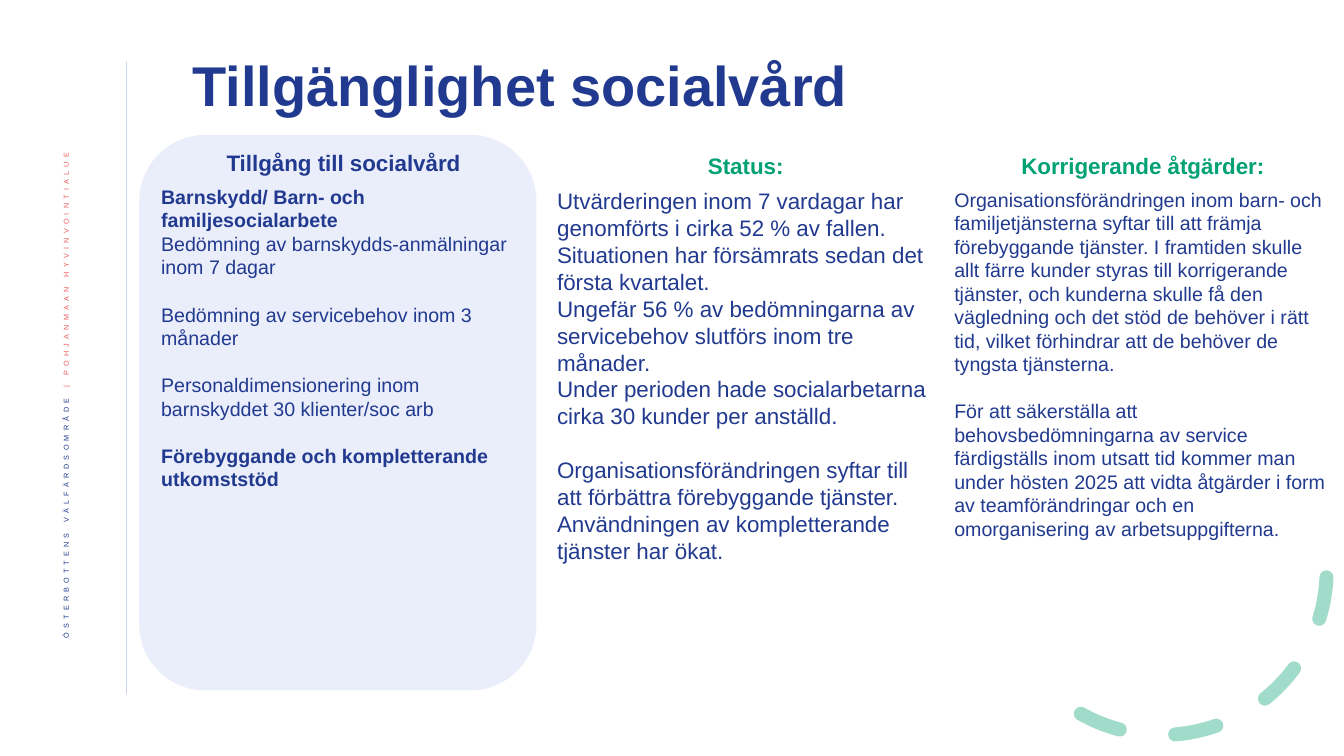
from dataclasses import dataclass, field
from typing import Optional

from lxml import etree
from pptx import Presentation
from pptx import util as u
from pptx.dml.color import RGBColor
from pptx.enum import dml, shapes, text
from pptx.oxml.ns import qn

NAVY = RGBColor(0x21, 0x3A, 0x8F)
GREEN = RGBColor(0x00, 0xA1, 0x74)
CORAL = RGBColor(0xEB, 0x5C, 0x5F)
LAVENDER = RGBColor(0xC9, 0xD2, 0xF2)
FONT = "Arial"
LINE_HEIGHT = 1.2
COLUMN_TOP = 3.71


@dataclass
class Run:
    words: str
    size: float
    color: RGBColor = NAVY
    bold: bool = False
    attributes: dict[str, str] = field(default_factory=dict)


@dataclass
class Block:
    """A paragraph; gap adds one line of space above it."""
    runs: list[Run]
    gap: bool = False
    format: dict = field(default_factory=dict)


@dataclass
class Column:
    left: float
    width: float
    height: float
    heading: str
    heading_color: RGBColor
    size: float
    body: list[tuple[str, bool, bool]]  # words, bold, gap
    heading_spacing: Optional[float] = None


COLUMNS = [
    Column(3.81, 9.7, 9.47, "Tillgång till socialvård", NAVY, 14, [
        ("Barnskydd/ Barn- och familjesocialarbete", True, False),
        ("Bedömning av barnskydds-anmälningar inom 7 dagar", False, False),
        ("Bedömning av servicebehov inom 3 månader", False, True),
        ("Personaldimensionering inom barnskyddet 30 klienter/soc arb", False, True),
        ("Förebyggande och kompletterande utkomststöd", True, True),
    ], heading_spacing=0.9),
    Column(13.79, 10.01, 10.72, "Status:", GREEN, 16, [
        ("Utvärderingen inom 7 vardagar har genomförts i cirka 52 % av fallen. "
         "Situationen har försämrats sedan det första kvartalet.", False, False),
        ("Ungefär 56 % av bedömningarna av servicebehov slutförs inom tre månader.",
         False, False),
        ("Under perioden hade socialarbetarna cirka 30 kunder per anställd.",
         False, False),
        ("Organisationsförändringen syftar till att förbättra förebyggande tjänster. "
         "Användningen av kompletterande tjänster har ökat.", False, True),
    ]),
    Column(23.8, 10.01, 10.13, "Korrigerande åtgärder:", GREEN, 14, [
        ("Organisationsförändringen inom barn- och familjetjänsterna syftar till att "
         "främja förebyggande tjänster. I framtiden skulle allt färre kunder styras "
         "till korrigerande tjänster, och kunderna skulle få den vägledning och det "
         "stöd de behöver i rätt tid, vilket förhindrar att de behöver de tyngsta "
         "tjänsterna.", False, False),
        ("För att säkerställa att behovsbedömningarna av service färdigställs inom "
         "utsatt tid kommer man under hösten 2025 att vidta åtgärder i form av "
         "teamförändringar och en omorganisering av arbetsuppgifterna.", False, True),
    ]),
]


def apply(target, values: dict) -> None:
    for name, value in values.items():
        setattr(target, name, value)


def set_alpha(element, percent: int) -> None:
    color = next(element.iter(qn("a:srgbClr")))
    etree.SubElement(color, qn("a:alpha")).set("val", str(percent * 1000))


def add_text(slide, box: tuple, blocks: list[Block], **frame_format):
    shape = slide.shapes.add_textbox(*map(u.Cm, box))
    frame = shape.text_frame
    apply(frame, {"word_wrap": True, **frame_format})
    for index, block in enumerate(blocks):
        paragraph = frame.add_paragraph() if index else frame.paragraphs[0]
        apply(paragraph, block.format)
        if block.gap:
            paragraph.space_before = u.Pt(block.runs[0].size * LINE_HEIGHT)
        for part in block.runs:
            run = paragraph.add_run()
            run.text = part.words
            apply(run.font, {"name": FONT, "size": u.Pt(part.size), "bold": part.bold})
            run.font.color.rgb = part.color
            for name, value in part.attributes.items():
                run.font._element.set(name, value)
    return shape


def add_column(slide, column: Column) -> None:
    heading_format = {"alignment": text.PP_ALIGN.CENTER, "space_after": u.Pt(6)}
    if column.heading_spacing:
        heading_format["line_spacing"] = column.heading_spacing
    heading = Block([Run(column.heading, 16, column.heading_color, True)],
                    format=heading_format)
    body = [Block([Run(words, column.size, bold=bold)], gap)
            for words, bold, gap in column.body]
    add_text(slide, (column.left, COLUMN_TOP, column.width, column.height),
             [heading, *body], auto_size=text.MSO_AUTO_SIZE.SHAPE_TO_FIT_TEXT)


def add_side_strip(slide) -> None:
    rule = slide.shapes.add_connector(shapes.MSO_CONNECTOR.STRAIGHT, u.Cm(3.18),
                                      u.Cm(1.55), u.Cm(3.18), u.Cm(17.48))
    rule.line.color.rgb = LAVENDER
    rule.line.width = u.Pt(0.5)
    etree.SubElement(rule._element.spPr, qn("a:effectLst"))

    raised = {"baseline": "30000", "spc": "300"}
    names = Block([Run("ÖSTERBOTTENS VÄLFÄRDSOMRÅDE ", 9, attributes=raised),
                   Run("| POHJANMAAN HYVINVOINTIALUE", 9, CORAL, attributes=raised)],
                  format={"alignment": text.PP_ALIGN.RIGHT, "line_spacing": 0.9})
    strip = add_text(slide, (1.07, 3.61, 1.32, 14.55), [names],
                     vertical_anchor=text.MSO_ANCHOR.MIDDLE)
    strip.text_frame._txBody.bodyPr.set("vert", "vert270")


def add_dashed_arc(slide) -> None:
    arc = slide.shapes.add_shape(shapes.MSO_SHAPE.ARC, u.Cm(25.12), u.Cm(10.21),
                                 u.Cm(8.31), u.Cm(8.31))
    arc.shadow.inherit = False
    arc.rotation = 98.9
    for index, adjustment in enumerate((158.17, 17.81)):
        arc.adjustments[index] = adjustment
    arc.fill.background()
    arc.line.color.rgb = GREEN
    apply(arc.line, {"width": u.Pt(10), "dash_style": dml.MSO_LINE.DASH})
    outline = arc._element.spPr.find(qn("a:ln"))
    outline.set("cap", "rnd")
    set_alpha(outline, 36)


def add_panel(slide) -> None:
    panel = slide.shapes.add_shape(shapes.MSO_SHAPE.ROUNDED_RECTANGLE, u.Cm(3.51),
                                   u.Cm(3.4), u.Cm(10.01), u.Cm(14))
    panel.shadow.inherit = False
    panel.fill.solid()
    panel.fill.fore_color.rgb = LAVENDER
    set_alpha(panel._element.spPr, 38)
    panel.line.fill.background()


def main() -> None:
    presentation = Presentation()
    apply(presentation, {"slide_width": u.Cm(33.87), "slide_height": u.Cm(19.05)})
    slide = presentation.slides.add_slide(presentation.slide_layouts[6])
    add_side_strip(slide)
    add_dashed_arc(slide)
    title = Block([Run("Tillgänglighet socialvård", 40, bold=True)],
                  format={"line_spacing": 0.9})
    add_text(slide, (4.6, 1.14, 25.91, 2.16), [title],
             vertical_anchor=text.MSO_ANCHOR.MIDDLE)
    add_panel(slide)
    for column in COLUMNS:
        add_column(slide, column)
    presentation.save("out.pptx")


if __name__ == "__main__":
    main()
